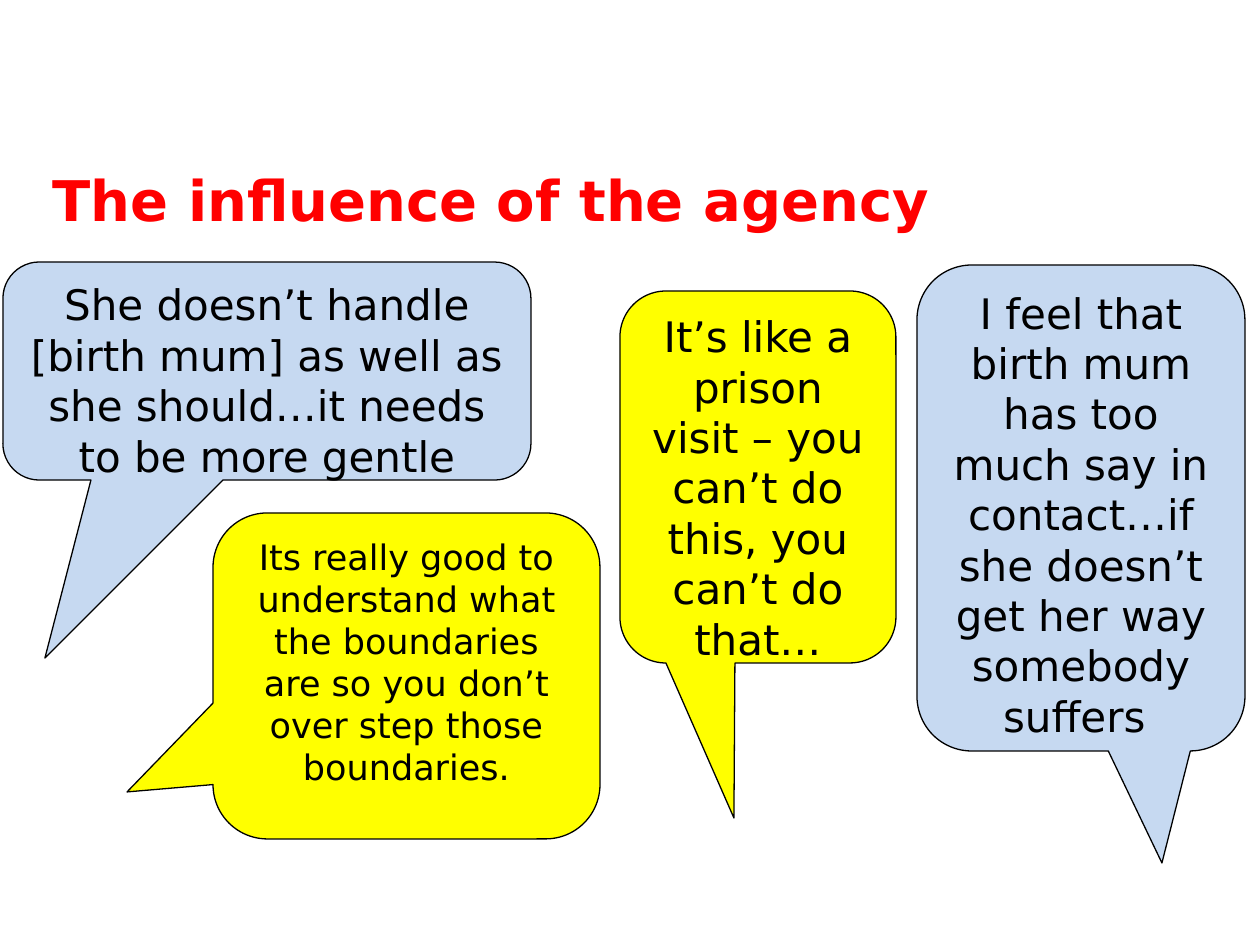
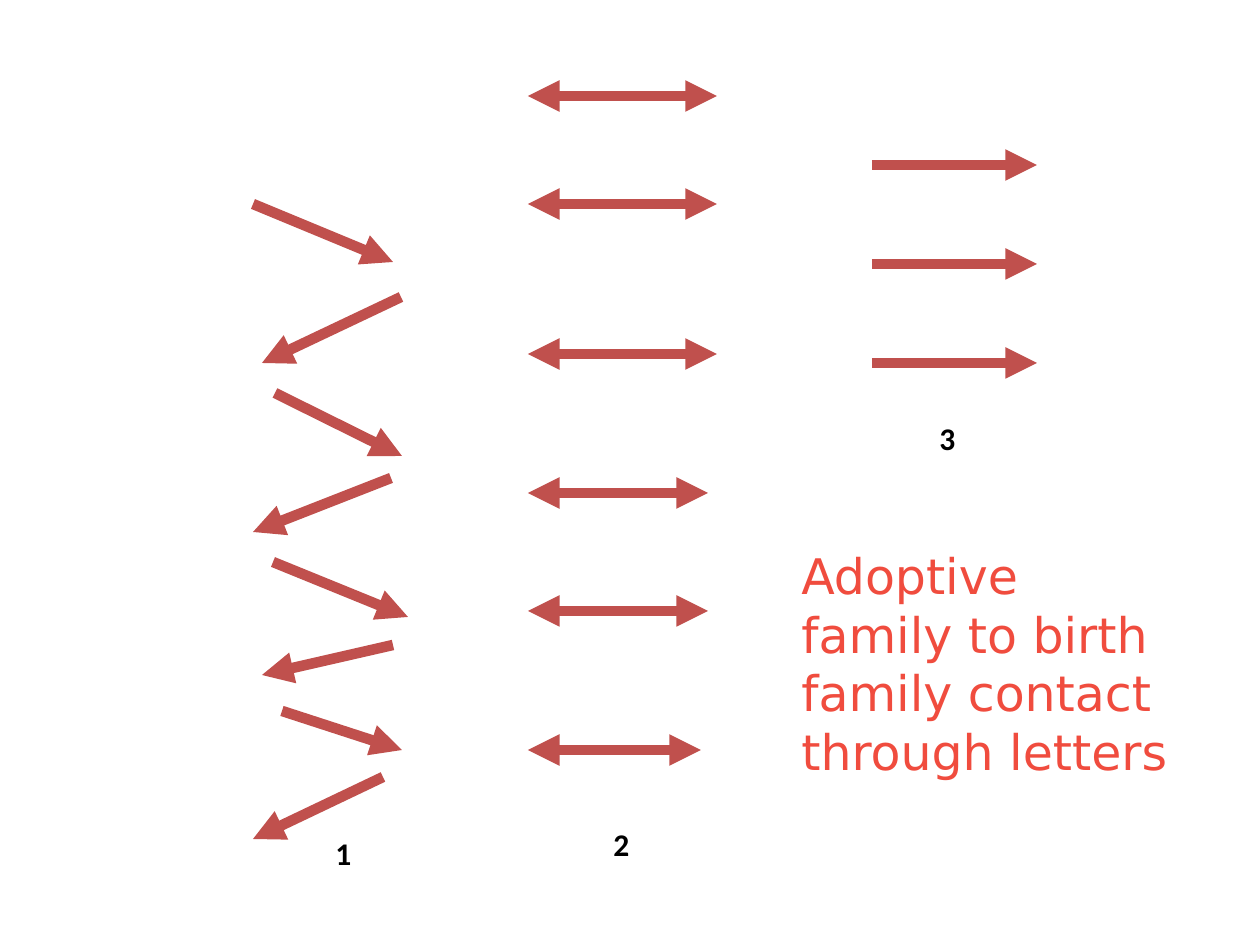
import pptx
import pptx.dml.color
import pptx.enum.shapes
import pptx.enum.text
import pptx.oxml.ns
import pptx.util
from lxml import etree

PX = 914400 / 126  # EMU in one px
SLIDE_SIZE = (1260, 945)
TITLE_ONLY, BLANK = 5, 6

TALK_FONT, LABEL_FONT = "DejaVu Sans", "Calibri"
BLACK, TITLE_RED, CAPTION_RED = "000000", "FF0000", "F04C3E"
BLUE, YELLOW, ARROW_RED = "C6D9F1", "FFFF00", "C0504D"

ALIGN = pptx.enum.text.PP_ALIGN
ANCHOR = pptx.enum.text.MSO_ANCHOR


def emu(*lengths):
    return [pptx.util.Emu(round(length * PX)) for length in lengths]


def rgb(hex_colour):
    return pptx.dml.color.RGBColor.from_string(hex_colour)


def add_element(parent, tag, **attributes):
    etree.SubElement(parent, pptx.oxml.ns.qn(tag), attributes)


class Deck:
    """Holds the shared style and the slide being filled."""

    def __init__(self):
        self.prs = pptx.Presentation()
        self.prs.slide_width, self.prs.slide_height = emu(*SLIDE_SIZE)
        self.slide = None

    def new_slide(self, layout):
        self.slide = self.prs.slides.add_slide(self.prs.slide_layouts[layout])

    def fill_text(self, frame, text, size, colour, font=TALK_FONT, bold=False,
                  align=ALIGN.LEFT, anchor=ANCHOR.TOP):
        frame.text = text
        frame.word_wrap = True
        frame.vertical_anchor = anchor
        for paragraph in frame.paragraphs:
            paragraph.alignment = align
            for run in paragraph.runs:
                run.font.name = font
                run.font.size = pptx.util.Pt(size)
                run.font.bold = bold
                run.font.color.rgb = rgb(colour)

    def title(self, text, box):
        title = self.slide.shapes.title
        title.left, title.top, title.width, title.height = emu(*box)
        self.fill_text(title.text_frame, text, 32, TITLE_RED, bold=True,
                       anchor=ANCHOR.MIDDLE)

    def speech(self, text, box, tip, fill, size=24):
        """A rounded bubble whose pointer ends at tip."""
        kind = pptx.enum.shapes.MSO_SHAPE.ROUNDED_RECTANGULAR_CALLOUT
        bubble = self.slide.shapes.add_shape(kind, *emu(*box))
        left, top, width, height = box
        bubble.adjustments[0] = (tip[0] - left) / width - 0.5
        bubble.adjustments[1] = (tip[1] - top) / height - 0.5
        bubble.shadow.inherit = False
        bubble.fill.solid()
        bubble.fill.fore_color.rgb = rgb(fill)
        bubble.line.color.rgb = rgb(BLACK)
        bubble.line.width = pptx.util.Pt(0.75)
        self.fill_text(bubble.text_frame, text, size, BLACK,
                       align=ALIGN.CENTER)

    def arrow(self, x1, y1, x2, y2, both_ways=False):
        arrow = self.slide.shapes.add_connector(
            pptx.enum.shapes.MSO_CONNECTOR.STRAIGHT, *emu(x1, y1, x2, y2))
        arrow.line.color.rgb = rgb(ARROW_RED)
        arrow.line.width = pptx.util.Pt(6)
        properties = arrow.element.spPr
        outline = properties.find(pptx.oxml.ns.qn("a:ln"))
        if both_ways:
            add_element(outline, "a:headEnd", type="triangle")
        add_element(outline, "a:tailEnd", type="triangle")
        add_element(properties, "a:effectLst")

    def text(self, text, box, size, colour, **style):
        frame = self.slide.shapes.add_textbox(*emu(*box)).text_frame
        self.fill_text(frame, text, size, colour, **style)
        frame.auto_size = pptx.enum.text.MSO_AUTO_SIZE.SHAPE_TO_FIT_TEXT


def agency_slide(deck):
    deck.new_slide(TITLE_ONLY)
    deck.title("The influence of the agency", (40, 120, 1186, 158))
    deck.speech("She doesn’t handle [birth mum] as well as she should…it "
                "needs to be more gentle",
                (3, 262, 528, 218), (45, 658), BLUE)
    deck.speech("I feel that birth mum has too much say in contact…if she "
                "doesn’t get her way somebody suffers ",
                (917, 265, 328, 486), (1162, 863), BLUE)
    deck.speech("Its really good to understand what the boundaries are so "
                "you don’t over step those boundaries.",
                (213, 513, 387, 326), (127, 792), YELLOW, size=20)
    deck.speech("It’s like a prison visit – you can’t do this, you can’t do "
                "that…",
                (620, 291, 276, 372), (734, 818), YELLOW)


def letters_slide(deck):
    deck.new_slide(BLANK)

    # Pattern 1: letters answered in turn
    for ends in [(253, 204, 393, 262), (401, 297, 262, 363),
                 (275, 393, 402, 456), (391, 478, 253, 532),
                 (273, 562, 408, 617), (393, 645, 262, 675),
                 (282, 711, 402, 750), (383, 777, 253, 839)]:
        deck.arrow(*ends)

    # Pattern 2: letters exchanged both ways
    for y, right in [(96, 717), (204, 717), (354, 717),
                     (493, 708), (611, 708), (750, 701)]:
        deck.arrow(528, y, right, y, both_ways=True)

    # Pattern 3: letters sent one way only
    for step in range(3):
        y = 165 + 99 * step
        deck.arrow(872, y, 1037, y)

    # Pattern numbers and caption
    for number, box in [("1", (323, 828, 63, 50)),
                        ("2", (601, 819, 78, 50)),
                        ("3", (927, 413, 71, 50))]:
        deck.text(number, box, 18, BLACK, font=LABEL_FONT, bold=True)
    deck.text("Adoptive family to birth family contact through letters",
              (789, 539, 397, 251), 28, CAPTION_RED)


def main():
    deck = Deck()
    agency_slide(deck)
    letters_slide(deck)
    deck.prs.save("out.pptx")


if __name__ == "__main__":
    main()
